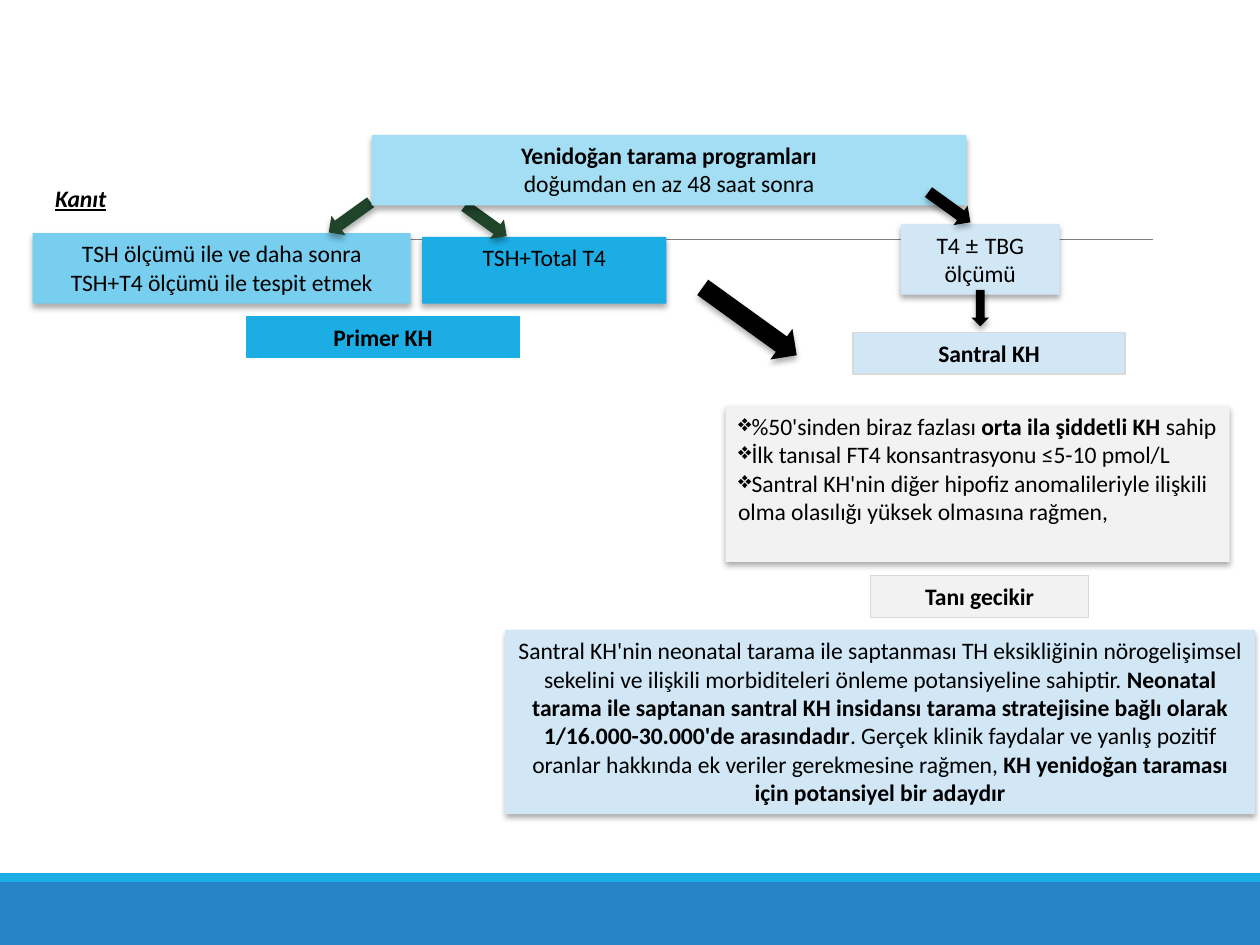
from dataclasses import dataclass

from lxml import etree
from pptx import Presentation
from pptx import util as u
from pptx.dml.color import RGBColor
from pptx.enum import shapes, text
from pptx.oxml.ns import qn


@dataclass(frozen=True)
class Theme:
    font: str = "Calibri"
    symbol_font: str = "Lato"
    size: float = 13.5
    ink: str = "000000"
    forest: str = "1F442A"
    blue: str = "2683C6"
    cyan: str = "1CADE4"
    sky: str = "77CEEF"
    light_sky: str = "A4DEF4"
    pale: str = "D1E7F6"
    mist: str = "F2F2F2"
    edge: str = "D9D9D9"
    rule: str = "808080"


@dataclass(frozen=True)
class Span:
    words: str
    bold: bool = False
    font: str = Theme.font


THEME = Theme()
CELL = 0.1
COLUMNS, ROWS = 100, 75
LABEL_ROWS = 3.3
SMALL_ARROW = (4.1, 1.9)
SLOPE = 35.8


def cells(*counts):
    return [u.Inches(count * CELL) for count in counts]


def rgb(code):
    return RGBColor.from_string(code)


def add_shadow(shape):
    effects = shape._element.spPr.find(qn("a:effectLst"))
    shadow = etree.SubElement(
        effects, qn("a:outerShdw"), blurRad=str(u.Pt(3.5)),
        dist=str(u.Pt(2.2)), dir="5400000", algn="ctr", rotWithShape="0")
    color = etree.SubElement(shadow, qn("a:srgbClr"), val=THEME.ink)
    etree.SubElement(color, qn("a:alpha"), val="32000")


def add_block(page, area, fill, edge=None, kind=shapes.MSO_SHAPE.RECTANGLE, shadow=False):
    shape = page.shapes.add_shape(kind, *cells(*area))
    shape.fill.solid()
    shape.fill.fore_color.rgb = rgb(fill)
    if edge:
        shape.line.color.rgb = rgb(edge)
        shape.line.width = u.Pt(0.75)
    else:
        shape.line.fill.background()
    shape.shadow.inherit = False
    if shadow:
        add_shadow(shape)
    return shape


def add_arrow(page, area, fill, angle=0, kind=shapes.MSO_SHAPE.RIGHT_ARROW):
    arrow = add_block(page, area, fill, kind=kind, shadow=True)
    arrow.rotation = angle


def add_bullet(para):
    properties = para._p.get_or_add_pPr()
    properties.set("marL", "0")
    properties.set("indent", "0")
    etree.SubElement(properties, qn("a:buChar"), char="❖")


def write(box, paragraphs, align=text.PP_ALIGN.CENTER, bullets=False):
    frame = box.text_frame
    frame.word_wrap = True
    frame.vertical_anchor = text.MSO_ANCHOR.TOP
    for index, spans in enumerate(paragraphs):
        para = frame.add_paragraph() if index else frame.paragraphs[0]
        para.alignment = align
        if bullets:
            add_bullet(para)
        for span in spans:
            run = para.add_run()
            run.text = span.words
            run.font.name = span.font
            run.font.size = u.Pt(THEME.size)
            run.font.bold = span.bold
            run.font.color.rgb = rgb(THEME.ink)


def add_card(page, area, fill, paragraphs, **style):
    write(add_block(page, area, fill, shadow=True), paragraphs, **style)


def add_label(page, left, top, width, fill, edge, words):
    box = add_block(page, (left, top, width, LABEL_ROWS), fill, edge)
    write(box, [[Span(words, True)]])


def add_backdrop(page):
    add_block(page, (0, 70, COLUMNS, ROWS - 70), THEME.blue)
    add_block(page, (0, 69.3, COLUMNS, 0.7), THEME.cyan)
    rule = page.shapes.add_connector(
        shapes.MSO_CONNECTOR.STRAIGHT, *cells(9.8, 19, 91.5, 19))
    rule.line.color.rgb = rgb(THEME.rule)
    rule.line.width = u.Pt(0.5)
    etree.SubElement(rule._element.spPr, qn("a:effectLst"))


def add_screening(page):
    add_card(page, (2.6, 18.5, 30, 5.6), THEME.sky,
             [[Span("TSH ölçümü ile ve daha sonra TSH+T4 ölçümü ile tespit etmek")]])
    add_card(page, (33.5, 18.8, 19.4, 5.3), THEME.cyan, [[Span("TSH+Total T4")]])
    add_card(page, (71.5, 17.8, 12.6, 5.6), THEME.pale,
             [[Span("T4 "), Span("± ", font=THEME.symbol_font), Span("TBG ölçümü")]])
    add_arrow(page, (77.1, 23, 1.4, 2.9), THEME.ink, kind=shapes.MSO_SHAPE.DOWN_ARROW)
    add_arrow(page, (36.5, 16.6, *SMALL_ARROW), THEME.forest, SLOPE)
    add_arrow(page, (25.7, 16.3, *SMALL_ARROW), THEME.forest, 180 - SLOPE)
    add_card(page, (29.5, 10.7, 47.2, 5.6), THEME.light_sky,
             [[Span("Yenidoğan tarama programları", True)],
              [Span("doğumdan en az 48 saat sonra")]])


def add_findings(page):
    add_card(page, (57.6, 32.2, 40, 12.4), THEME.mist,
             [[Span("%50'sinden biraz fazlası "),
               Span("orta ila şiddetli KH ", True), Span("sahip")],
              [Span("İlk tanısal FT4 konsantrasyonu ≤5-10 pmol/L")],
              [Span("Santral KH'nin diğer hipofiz anomalileriyle ilişkili "
                    "olma olasılığı yüksek olmasına rağmen,")]],
             align=text.PP_ALIGN.LEFT, bullets=True)
    add_arrow(page, (54.9, 24, 9.2, 3), THEME.ink, SLOPE)
    add_label(page, 19.6, 25.1, 21.6, THEME.cyan, THEME.cyan, "Primer KH")
    add_arrow(page, (73.3, 15.5, *SMALL_ARROW), THEME.ink, SLOPE)
    add_label(page, 67.7, 26.4, 21.6, THEME.pale, THEME.edge, "Santral KH")
    add_label(page, 69.1, 45.7, 17.3, THEME.mist, THEME.edge, "Tanı gecikir")


def add_conclusion(page):
    add_card(page, (40.1, 50, 59.5, 14.6), THEME.pale, [[
        Span("Santral KH'nin neonatal tarama ile saptanması TH eksikliğinin "
             "nörogelişimsel sekelini ve ilişkili morbiditeleri önleme "
             "potansiyeline sahiptir. "),
        Span("Neonatal tarama ile saptanan santral KH insidansı tarama "
             "stratejisine bağlı olarak 1/16.000-30.000'de arasındadır", True),
        Span(". Gerçek klinik faydalar ve yanlış pozitif oranlar hakkında "
             "ek veriler gerekmesine rağmen, "),
        Span("KH yenidoğan taraması için potansiyel bir adaydır", True)]])


def add_heading(page):
    box = page.shapes.add_textbox(*cells(3.4, 14.1, 50.4, LABEL_ROWS))
    write(box, [[Span("Kanıt", True)]], align=text.PP_ALIGN.LEFT)
    font = box.text_frame.paragraphs[0].runs[0].font
    font.italic = True
    font.underline = True


def main():
    deck = Presentation()
    deck.slide_width, deck.slide_height = cells(COLUMNS, ROWS)
    page = deck.slides.add_slide(deck.slide_layouts[6])
    add_backdrop(page)
    add_screening(page)
    add_findings(page)
    add_conclusion(page)
    add_heading(page)
    deck.save("out.pptx")


if __name__ == "__main__":
    main()
